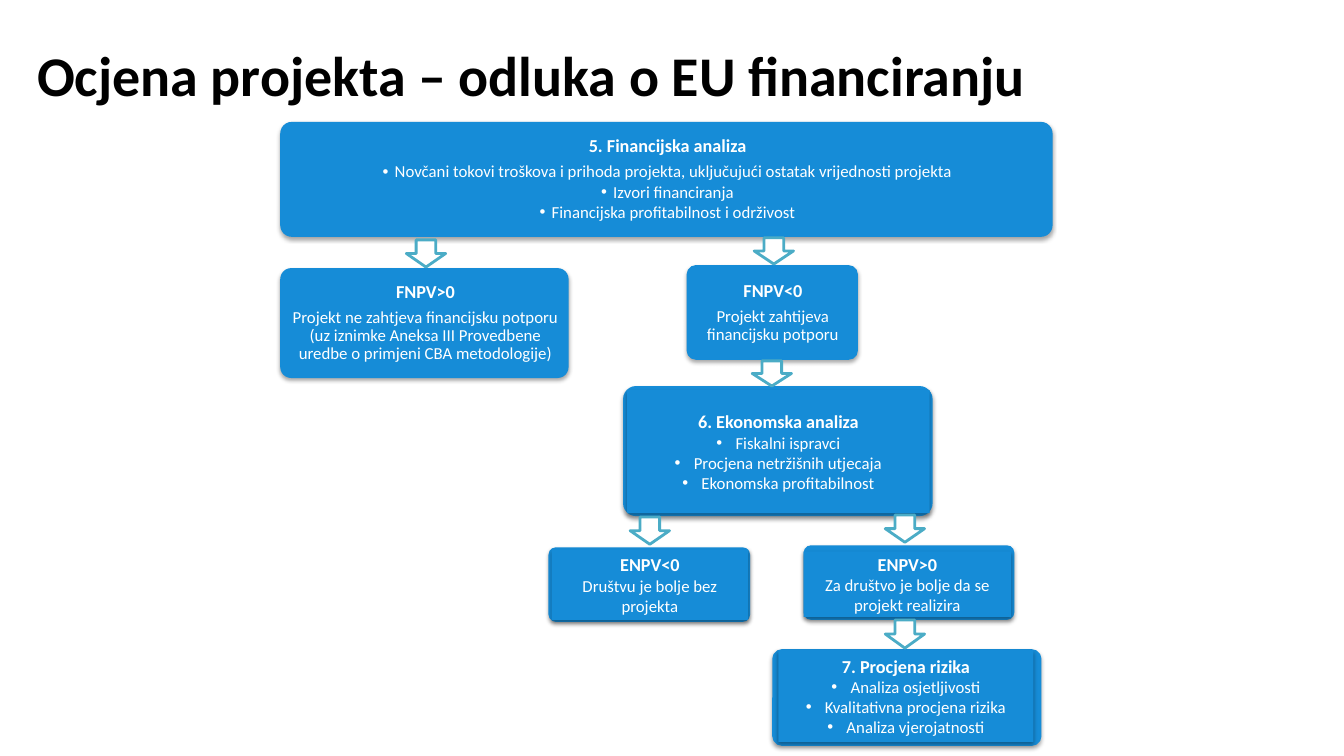
from lxml import etree
from pptx import Presentation
from pptx.dml.color import RGBColor
from pptx.enum.shapes import MSO_SHAPE
from pptx.enum.text import MSO_ANCHOR, PP_ALIGN
from pptx.oxml.ns import qn
from pptx.util import Pt

PX = 9144  # 100 px to the inch
BLUE = RGBColor(0x16, 0x8C, 0xD7)
TEAL = RGBColor(0x4B, 0xAC, 0xC6)
WHITE = RGBColor(0xFF, 0xFF, 0xFF)
BLACK = RGBColor(0x00, 0x00, 0x00)
ROUND = MSO_SHAPE.ROUNDED_RECTANGLE
RECT = MSO_SHAPE.RECTANGLE
ARROW = MSO_SHAPE.DOWN_ARROW
MIDDLE = MSO_ANCHOR.MIDDLE
CENTER = PP_ALIGN.CENTER

prs = Presentation()
prs.slide_width, prs.slide_height = 1333 * PX, 750 * PX
slide = prs.slides.add_slide(prs.slide_layouts[6])
shapes = slide.shapes


def panel(kind, area):
    """Add a blue shape with a soft shadow below it."""
    shape = shapes.add_shape(kind, *[n * PX for n in area])
    shape.fill.solid()
    shape.fill.fore_color.rgb = BLUE
    shape.line.fill.background()
    shape.shadow.inherit = False
    effects = shape._element.spPr.find(qn("a:effectLst"))
    outer = etree.SubElement(effects, qn("a:outerShdw"), blurRad="40000",
                             dist="23000", dir="5400000", rotWithShape="0")
    color = etree.SubElement(outer, qn("a:srgbClr"), val="000000")
    etree.SubElement(color, qn("a:alpha"), val="35000")
    return shape


def style(para, size, bold, color):
    para.font.name = "Calibri"
    para.font.size = Pt(size)
    para.font.bold = bold
    para.font.color.rgb = color


title = shapes.add_textbox(27 * PX, 5 * PX, 1287 * PX, 145 * PX).text_frame
title.word_wrap = True
title.vertical_anchor = MIDDLE
title.text = "Ocjena projekta – odluka o EU financiranju"
title.paragraphs[0].line_spacing = 0.9
style(title.paragraphs[0], 40, True, BLACK)

# outer area, inner area, loose text box, bullet indent, heading, lines
steps = [
    ((278, 121, 766, 114), (282, 124, 760, 108), True, 12,
     "5. Financijska analiza",
     ["Novčani tokovi troškova i prihoda projekta, uključujući ostatak vrijednosti projekta",
      "Izvori financiranja",
      "Financijska profitabilnost i održivost"]),
    ((278, 266, 286, 109), (282, 269, 280, 103), True, 0,
     "FNPV>0",
     ["Projekt ne zahtjeva financijsku potporu (uz iznimke Aneksa III "
      "Provedbene uredbe o primjeni CBA metodologije)"]),
    ((681, 263, 170, 94), (684, 266, 165, 89), True, 0,
     "FNPV<0", ["Projekt zahtijeva financijsku potporu"]),
    ((618, 383, 307, 129), (622, 387, 300, 122), False, 19,
     "6. Ekonomska analiza",
     ["Fiskalni ispravci", "Procjena netržišnih utjecaja",
      "Ekonomska profitabilnost"]),
    ((544, 543, 200, 74), (547, 545, 195, 70), False, 0,
     "ENPV<0", ["Društvu je bolje bez projekta"]),
    ((797, 541, 209, 74), (797, 547, 206, 65), False, 0,
     "ENPV>0", ["Za društvo je bolje da se projekt realizira"]),
    ((766, 644, 267, 96), (772, 645, 253, 91), False, 19,
     "7. Procjena rizika",
     ["Analiza osjetljivosti", "Kvalitativna procjena rizika",
      "Analiza vjerojatnosti"]),
]

for outer, inner, loose, indent, head, lines in steps:
    panel(ROUND, outer).adjustments[0] = 0.1
    if loose:
        box = shapes.add_textbox(*[n * PX for n in inner])
    else:
        box = panel(RECT, inner)
    frame = box.text_frame
    frame.word_wrap = True
    frame.vertical_anchor = MIDDLE
    inset = (5 if loose else 6) * PX
    frame.margin_left = frame.margin_right = inset
    frame.margin_top = frame.margin_bottom = inset
    for i, text in enumerate([head] + lines):
        para = frame.add_paragraph() if i else frame.paragraphs[0]
        para.text = text
        para.alignment = CENTER
        bullet = i > 0 and indent > 0
        if bullet:
            props = para._p.get_or_add_pPr()
            props.set("marL", str(indent * PX))
            props.set("indent", str(-indent * PX))
            etree.SubElement(props, qn("a:buFont"), typeface="Arial")
            etree.SubElement(props, qn("a:buChar"), char="•")
        if loose:
            para.line_spacing = 0.9
            para.space_after = Pt(1.5 if bullet else 5)
        style(para, 12 if i else 13, i == 0, WHITE)

for left, top, height in [(403, 238, 27), (748, 236, 26), (746, 358, 25),
                          (625, 513, 27), (878, 511, 27), (878, 615, 28)]:
    arrow = shapes.add_shape(ARROW, left * PX, top * PX, 39 * PX, height * PX)
    arrow.fill.solid()
    arrow.fill.fore_color.rgb = WHITE
    arrow.line.color.rgb = TEAL
    arrow.line.width = Pt(2)
    arrow.shadow.inherit = False

prs.save("out.pptx")
